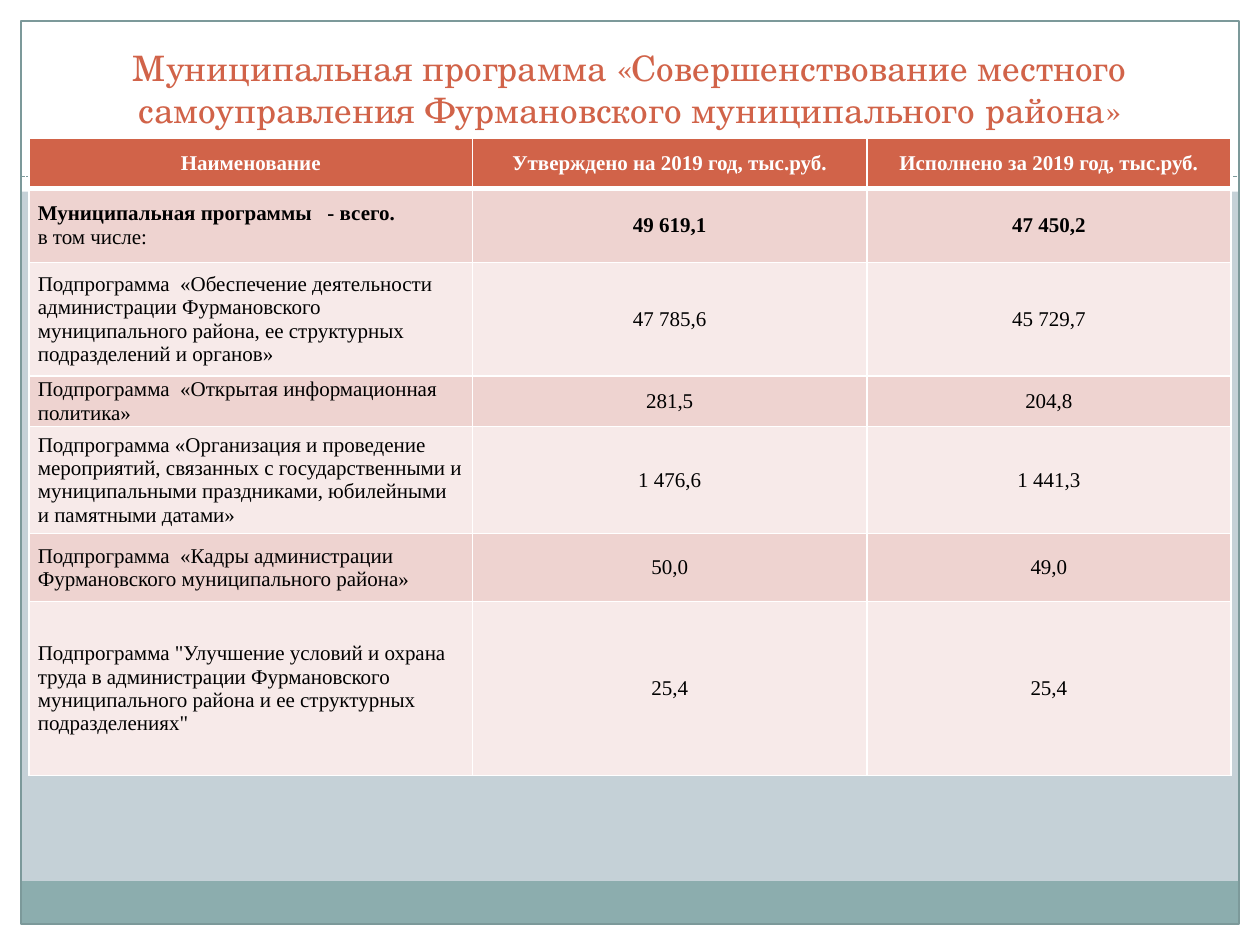
from lxml import etree
from pptx import Presentation
from pptx import util as u
from pptx.dml.color import RGBColor
from pptx.enum import dml, shapes, text
from pptx.oxml import ns

TITLE = "Муниципальная программа «Совершенствование местного самоуправления Фурмановского муниципального района»"
HEADER = ("Наименование", "Утверждено на 2019 год, тыс.руб.", "Исполнено за 2019 год, тыс.руб.")
TOTAL = ("Муниципальная программы   - всего.\nв том числе:", "49 619,1", "47 450,2")
SUBPROGRAMS = [
    ("Подпрограмма  «Обеспечение деятельности администрации Фурмановского муниципального района, "
     "ее структурных подразделений и органов»", "47 785,6", "45 729,7"),
    ("Подпрограмма  «Открытая информационная политика»", "281,5", "204,8"),
    ("Подпрограмма «Организация и проведение мероприятий, связанных с государственными "
     "и муниципальными праздниками, юбилейными и памятными датами»", "1 476,6", "1 441,3"),
    ("Подпрограмма  «Кадры администрации Фурмановского муниципального района»", "50,0", "49,0"),
    ("Подпрограмма \"Улучшение условий и охрана труда в администрации Фурмановского "
     "муниципального района и ее структурных подразделениях\"", "25,4", "25,4"),
]
ROWS = [HEADER, TOTAL, *SUBPROGRAMS]
COLUMN_WIDTHS = (253.4, 225.4, 208)
ROW_HEIGHTS = (28.8, 42.5, 64.8, 28.8, 61.2, 38.9, 99.4)

THEME = {
    "page": "C5D1D7", "white": "FFFFFF", "black": "000000", "accent": "D16349",
    "footer": "8CADAE", "frame": "7C999A", "bands": ("EED3D0", "F7EAE9"),
    "title_font": "TeX Gyre Schola", "title_size": 20,
    "body_font": "Times New Roman", "body_size": 12,
}
WIDTH, HEIGHT, MARGIN = 720, 540, 12
INNER_WIDTH = WIDTH - 2 * MARGIN


def color(key):
    return RGBColor.from_string(THEME.get(key, key))


def add_rect(slide, box, fill=None, line=None):
    rect = slide.shapes.add_shape(shapes.MSO_SHAPE.RECTANGLE, *map(u.Pt, box))
    rect.shadow.inherit = False
    if fill:
        rect.fill.solid()
        rect.fill.fore_color.rgb = color(fill)
    else:
        rect.fill.background()
    if line:
        rect.line.color.rgb = color(line)
        rect.line.width = u.Pt(0.75)
    else:
        rect.line.fill.background()


def style(font, name, size, ink, bold=False):
    font.name = THEME[name]
    font.size = u.Pt(THEME[size])
    font.color.rgb = color(ink)
    font.bold = bold


def add_background(slide):
    slide.background.fill.solid()
    slide.background.fill.fore_color.rgb = color("page")
    for box in (
        (0, HEIGHT - MARGIN, WIDTH, MARGIN),
        (0, 0, WIDTH, 109.5),
        (0, 0, MARGIN, HEIGHT),
        (WIDTH - MARGIN, 0, MARGIN, HEIGHT),
    ):
        add_rect(slide, box, fill="white")
    add_rect(slide, (MARGIN, 503.5, INNER_WIDTH, 24.5), fill="footer")
    add_rect(slide, (MARGIN, MARGIN, INNER_WIDTH, HEIGHT - 2 * MARGIN), line="frame")
    rule = slide.shapes.add_connector(
        shapes.MSO_CONNECTOR.STRAIGHT, u.Pt(MARGIN), u.Pt(100.8), u.Pt(WIDTH - MARGIN), u.Pt(100.8))
    rule.line.color.rgb = color("frame")
    rule.line.width = u.Pt(0.75)
    rule.line.dash_style = dml.MSO_LINE.SQUARE_DOT
    etree.SubElement(rule._element.spPr, ns.qn("a:effectLst"))


def add_title(slide):
    frame = slide.shapes.add_textbox(u.Pt(24), u.Pt(18), u.Pt(672), u.Pt(60)).text_frame
    frame.word_wrap = True
    frame.vertical_anchor = text.MSO_ANCHOR.BOTTOM
    heading = frame.paragraphs[0]
    heading.text = TITLE
    heading.alignment = text.PP_ALIGN.CENTER
    style(heading.font, "title_font", "title_size", "accent")


def set_borders(cell, top, bottom):
    properties = cell._tc.get_or_add_tcPr()
    for side, width in (("L", 1), ("R", 1), ("T", top), ("B", bottom)):
        border = etree.SubElement(properties, ns.qn(f"a:ln{side}"), w=str(u.Pt(width)))
        fill = etree.SubElement(border, ns.qn("a:solidFill"))
        etree.SubElement(fill, ns.qn("a:srgbClr"), val=THEME["white"])


def fill_cell(cell, content, row, column):
    is_header = row == 0
    set_borders(cell, 3 if row == 1 else 1, 3 if is_header else 1)
    cell.fill.solid()
    cell.fill.fore_color.rgb = color("accent" if is_header else THEME["bands"][(row - 1) % 2])
    cell.vertical_anchor = text.MSO_ANCHOR.MIDDLE
    cell.margin_left = cell.margin_right = u.Pt(5)
    cell.margin_top = cell.margin_bottom = 0
    cell.text = content
    for index, paragraph in enumerate(cell.text_frame.paragraphs):
        centered = is_header or column > 0
        paragraph.alignment = text.PP_ALIGN.CENTER if centered else text.PP_ALIGN.LEFT
        style(paragraph.font, "body_font", "body_size",
              "white" if is_header else "black", row < 2 and index == 0)


def add_budget_table(slide):
    budget = slide.shapes.add_table(
        len(ROWS), len(HEADER), u.Pt(16.6), u.Pt(78.8),
        u.Pt(sum(COLUMN_WIDTHS)), u.Pt(sum(ROW_HEIGHTS))).table
    for column, width in zip(budget.columns, COLUMN_WIDTHS):
        column.width = u.Pt(width)
    for row, height in zip(budget.rows, ROW_HEIGHTS):
        row.height = u.Pt(height)
    for row, entries in enumerate(ROWS):
        for column, content in enumerate(entries):
            fill_cell(budget.cell(row, column), content, row, column)


def main():
    deck = Presentation()
    deck.slide_width, deck.slide_height = u.Pt(WIDTH), u.Pt(HEIGHT)
    slide = deck.slides.add_slide(deck.slide_layouts[6])
    add_background(slide)
    add_title(slide)
    add_budget_table(slide)
    deck.save("out.pptx")


if __name__ == "__main__":
    main()
